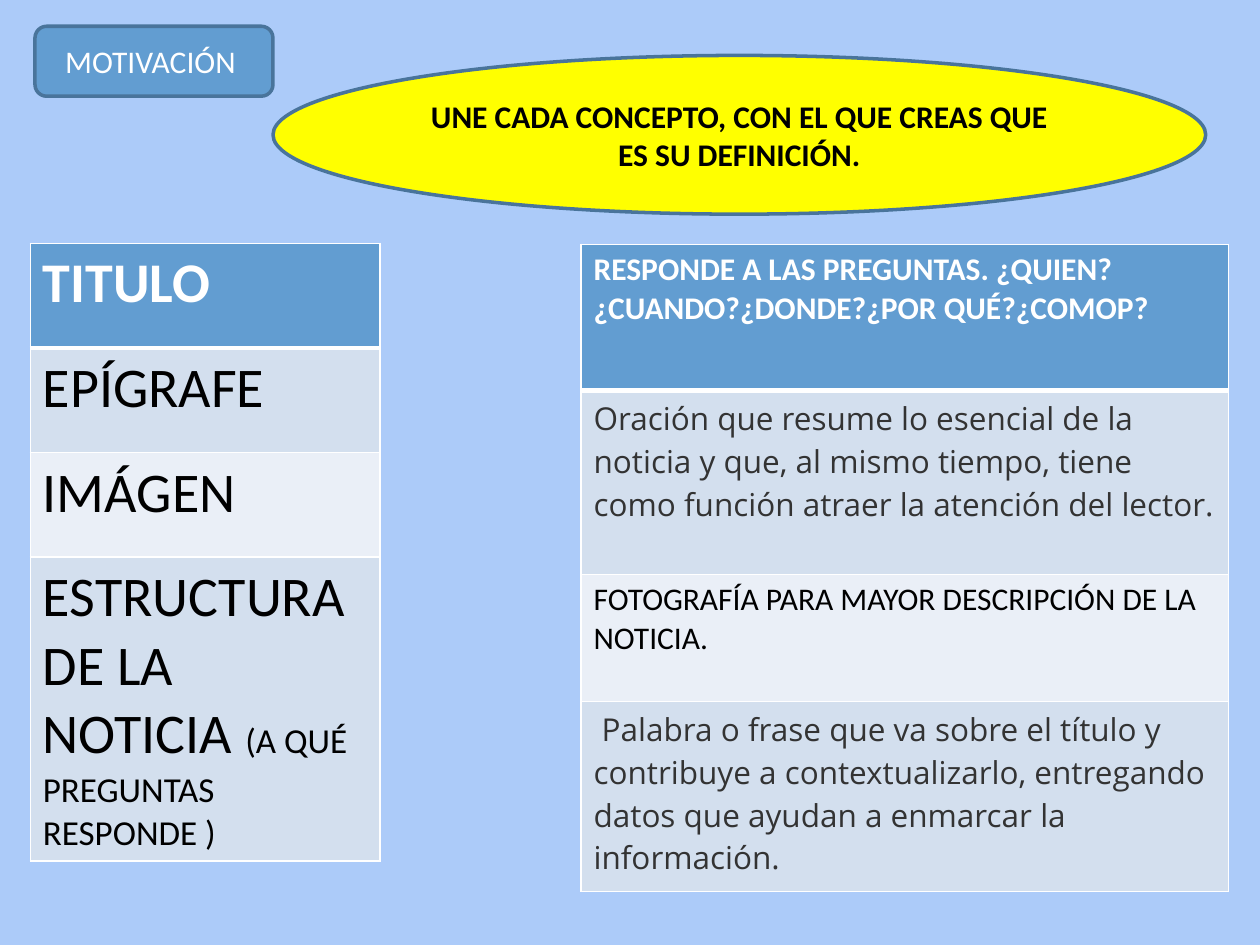
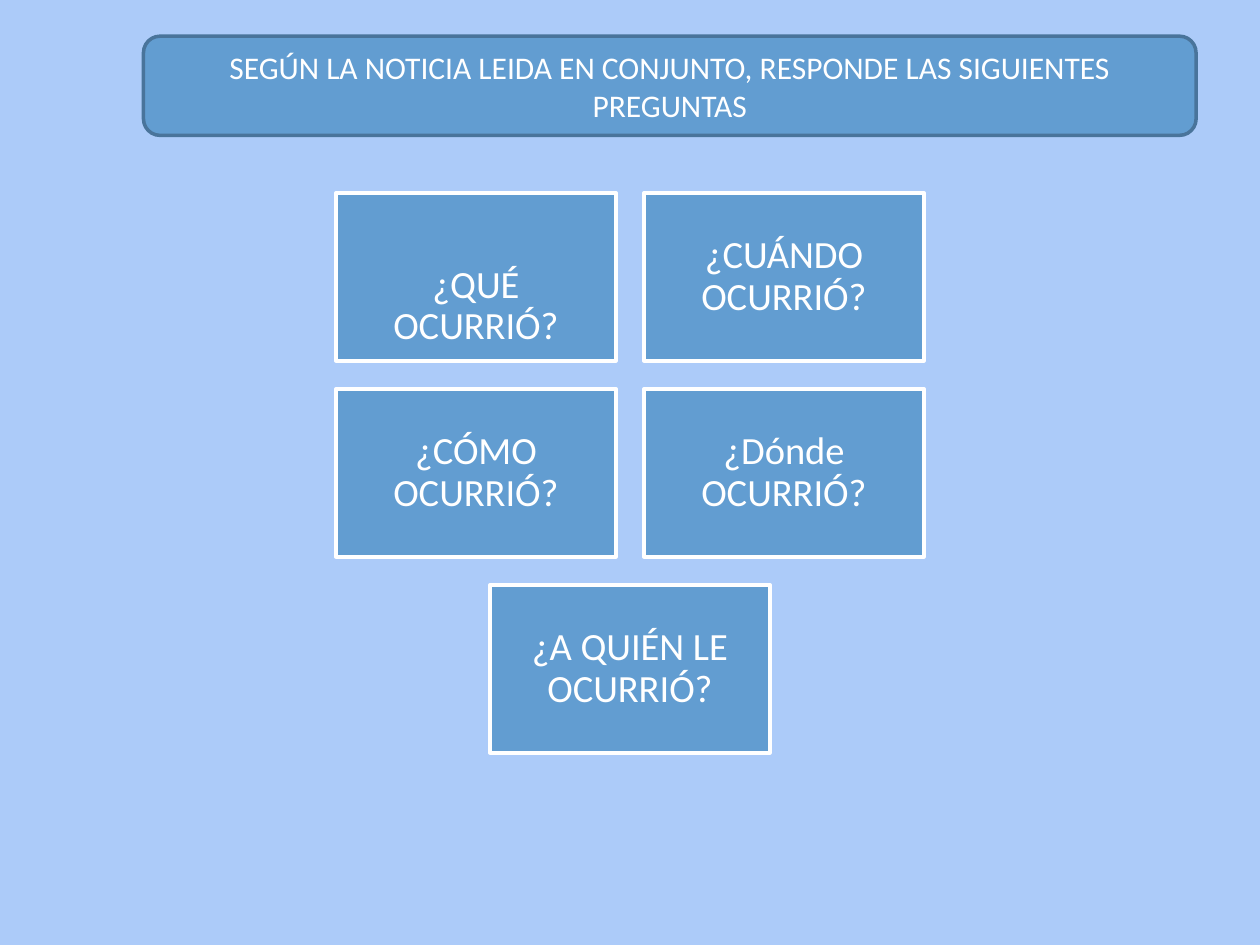
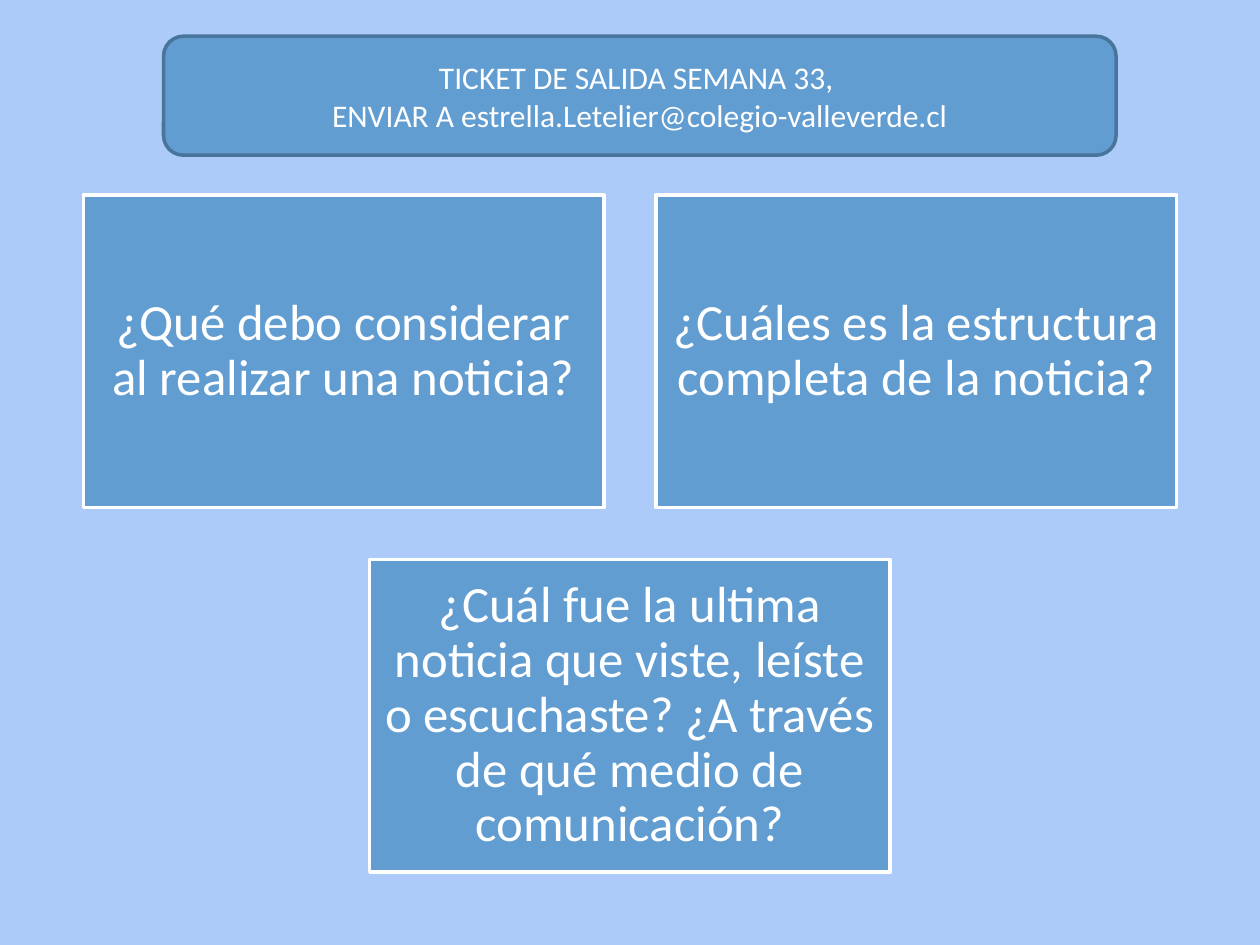
from lxml.etree import SubElement
from pptx import Presentation
from pptx.dml.color import RGBColor
from pptx.enum.shapes import MSO_SHAPE as Preset
from pptx.enum.text import MSO_ANCHOR as Anchor, PP_ALIGN as Align
from pptx.oxml.ns import qn
from pptx.util import Pt

SKY = RGBColor(0xAC, 0xCB, 0xF9)
BLUE = RGBColor(0x62, 0x9D, 0xD1)
DARK_BLUE = RGBColor(0x49, 0x74, 0x9B)
YELLOW = RGBColor(0xFF, 0xFF, 0x00)
PALE_BLUE = RGBColor(0xD3, 0xDF, 0xEE)
PALEST_BLUE = RGBColor(0xEA, 0xEF, 0xF7)
WHITE = RGBColor(0xFF, 0xFF, 0xFF)
BLACK = RGBColor(0x00, 0x00, 0x00)
GREY = RGBColor(0x33, 0x33, 0x33)

BODY_FONT = "Calibri"
QUOTE_FONT = "Open Sans"
SLIDE_WIDTH, SLIDE_HEIGHT = 720, 540


class Deck:
    """Hold the shared style and the current slide, and draw each kind of element."""

    def __init__(self):
        self.prs = Presentation()
        self.prs.slide_width = Pt(SLIDE_WIDTH)
        self.prs.slide_height = Pt(SLIDE_HEIGHT)
        background = self.prs.slide_master.background.fill
        background.solid()
        background.fore_color.rgb = SKY
        self.slide = None

    def new_slide(self):
        self.slide = self.prs.slides.add_slide(self.prs.slide_layouts[6])

    def add_text(self, paragraph, text, size=18, color=WHITE, bold=False, font=BODY_FONT):
        run = paragraph.add_run()
        run.text = text
        run.font.size = Pt(size)
        run.font.name = font
        run.font.bold = bold
        run.font.color.rgb = color

    def panel(self, preset, box, lines, fill=BLUE, outline=DARK_BLUE, **style):
        shape = self.slide.shapes.add_shape(preset, *map(Pt, box))
        shape.shadow.inherit = False
        shape.fill.solid()
        shape.fill.fore_color.rgb = fill
        shape.line.color.rgb = outline
        shape.line.width = Pt(2)
        frame = shape.text_frame
        frame.word_wrap = True
        frame.vertical_anchor = Anchor.MIDDLE
        for index, line in enumerate(lines):
            paragraph = frame.add_paragraph() if index else frame.paragraphs[0]
            paragraph.alignment = Align.CENTER
            self.add_text(paragraph, line, **style)
        return frame

    def banner(self, box, *lines):
        self.panel(Preset.ROUNDED_RECTANGLE, box, lines)

    def card(self, box, question, size, drop):
        frame = self.panel(Preset.RECTANGLE, box, [question], outline=WHITE, size=size)
        inset = Pt(0.3 * size)
        frame.margin_left = frame.margin_right = frame.margin_bottom = inset
        frame.margin_top = inset + Pt(drop)
        frame.paragraphs[0].line_spacing = 0.9

    def card_grid(self, top, width, size, questions, first_drop=0):
        height, gap = 0.6 * width, 0.1 * width
        for start in range(0, len(questions), 2):
            row = questions[start:start + 2]
            left = (SLIDE_WIDTH - len(row) * (width + gap) + gap) / 2
            y = top + start // 2 * (height + gap)
            for column, question in enumerate(row):
                drop = first_drop if start + column == 0 else 0
                box = (left + column * (width + gap), y, width, height)
                self.card(box, question, size, drop)

    def cell_borders(self, cell, bottom):
        properties = cell._tc.get_or_add_tcPr()
        for side, width in (("L", 1), ("R", 1), ("T", 1), ("B", bottom)):
            border = SubElement(properties, qn(f"a:ln{side}"), w=str(Pt(width)))
            paint = SubElement(border, qn("a:solidFill"))
            SubElement(paint, qn("a:srgbClr"), val=str(WHITE))

    def concept_table(self, left, top, width, rows):
        height = sum(row_height for row_height, _ in rows)
        frame = self.slide.shapes.add_table(len(rows), 1, Pt(left), Pt(top), Pt(width), Pt(height))
        table = frame.table
        table.horz_banding = False
        for index, (row_height, runs) in enumerate(rows):
            table.rows[index].height = Pt(row_height)
            cell = table.cell(index, 0)
            self.cell_borders(cell, bottom=1 if index else 3)
            cell.fill.solid()
            band = PALE_BLUE if index % 2 else PALEST_BLUE
            cell.fill.fore_color.rgb = band if index else BLUE
            for text, style in runs:
                self.add_text(cell.text_frame.paragraphs[0], text, **style)


def matching_slide(deck):
    deck.new_slide()
    deck.banner((20, 15, 136, 40), "MOTIVACIÓN ")
    deck.panel(Preset.OVAL, (156, 31.7, 533, 90.7),
               ["UNE CADA CONCEPTO, CON EL QUE CREAS QUE ES SU DEFINICIÓN."],
               fill=YELLOW, color=BLACK, bold=True)
    heading = {"bold": True}
    concept = {"size": 32, "color": BLACK}
    hint = {"size": 20, "color": BLACK}
    plain = {"color": BLACK}
    quote = {"color": GREY, "font": QUOTE_FONT}
    deck.concept_table(17.3, 139, 200, [
        (59.8, [("TITULO", {"size": 32, **heading})]),
        (59.8, [("EPÍGRAFE", concept)]),
        (59.8, [("IMÁGEN", concept)]),
        (173.5, [("ESTRUCTURA DE LA NOTICIA ", concept),
                 ("(A QUÉ PREGUNTAS RESPONDE )", hint)]),
    ])
    deck.concept_table(332, 139.7, 370, [
        (83.5, [("RESPONDE A LAS PREGUNTAS. ¿QUIEN?¿CUANDO?¿DONDE?¿POR QUÉ?¿COMOP?", heading)]),
        (105, [("Oración que resume lo esencial de la noticia y que, al mismo tiempo, "
                "tiene como función atraer la atención del lector.", quote)]),
        (72.7, [("FOTOGRAFÍA PARA MAYOR DESCRIPCIÓN DE LA NOTICIA.", plain)]),
        (108.7, [(" Palabra o frase que va sobre el título y contribuye a contextualizarlo, "
                  "entregando datos que ayudan a enmarcar la información.", quote)]),
    ])


def questions_slide(deck):
    deck.new_slide()
    deck.card_grid(110.2, 160, 22, [
        "¿QUÉ OCURRIÓ?",
        "¿CUÁNDO OCURRIÓ?",
        "¿CÓMO OCURRIÓ?",
        "¿Dónde OCURRIÓ?",
        "¿A QUIÉN LE OCURRIÓ?",
    ], first_drop=34)
    deck.banner((82, 20.7, 601.5, 56.7),
                "SEGÚN LA NOTICIA LEIDA EN CONJUNTO, RESPONDE LAS SIGUIENTES PREGUNTAS")


def exit_ticket_slide(deck):
    deck.new_slide()
    deck.banner((93.5, 20.7, 544.3, 68),
                "TICKET DE SALIDA SEMANA 33, ",
                "ENVIAR A estrella.Letelier@colegio-valleverde.cl")
    deck.card_grid(111.5, 297.5, 29, [
        "¿Qué debo considerar al realizar una noticia?",
        "¿Cuáles es la estructura completa de la noticia?",
        "¿Cuál fue la ultima noticia que viste, leíste o escuchaste? "
        "¿A través de qué medio de comunicación?",
    ])


def main():
    deck = Deck()
    matching_slide(deck)
    questions_slide(deck)
    exit_ticket_slide(deck)
    deck.prs.save("out.pptx")


if __name__ == "__main__":
    main()
